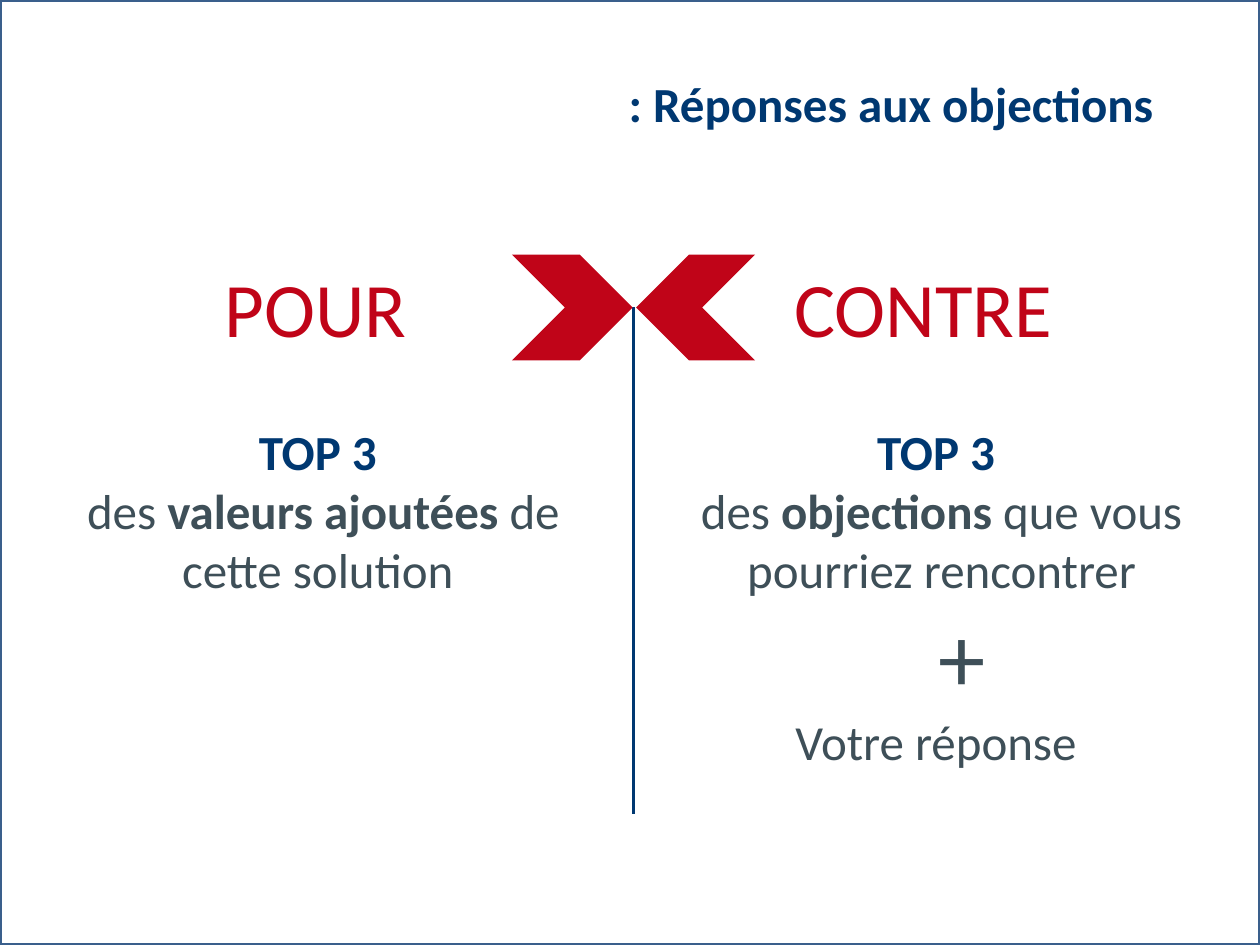
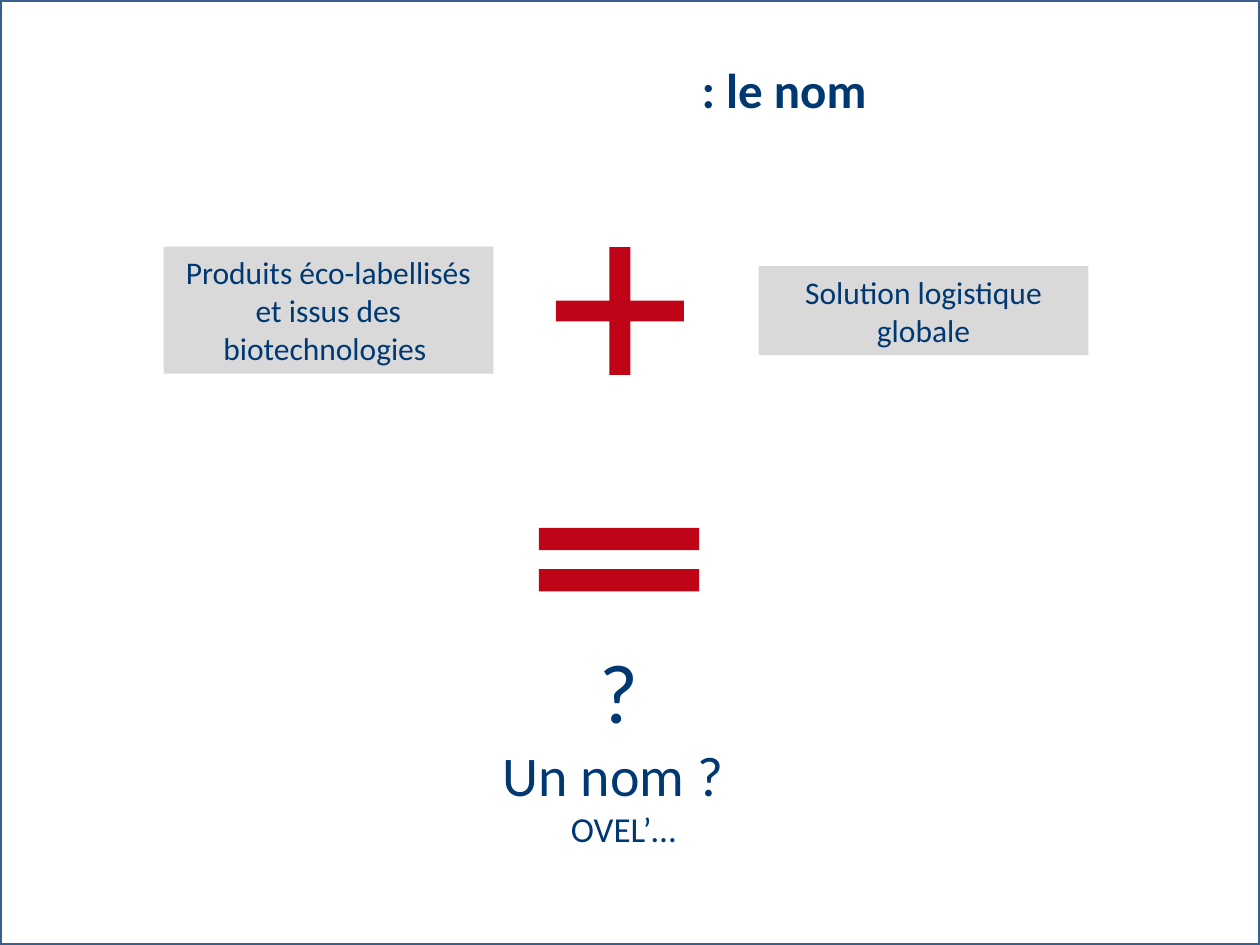
from pptx import Presentation
from pptx.dml.color import RGBColor
from pptx.enum.shapes import MSO_CONNECTOR as Connector, MSO_SHAPE as Shape
from pptx.enum.text import PP_ALIGN as Align
from pptx.oxml.ns import qn
from pptx.util import Pt
from lxml.etree import SubElement

NAVY, RED, SLATE, GREY, WHITE, FRAME = "003871", "C00418", "3E4F58", "D9D9D9", "FFFFFF", "3A5F8C"
WIDTH, HEIGHT = 720, 540
RULE = 2.25


def rgb(hex_code):
    return RGBColor.from_string(hex_code)


class Deck:
    """Holds the shared style and the slide being built."""

    font = "Calibri"

    def __init__(self):
        self.file = Presentation()
        self.file.slide_width, self.file.slide_height = Pt(WIDTH), Pt(HEIGHT)
        self.slide = None

    def new_slide(self, title, title_left, title_top):
        self.slide = self.file.slides.add_slide(self.file.slide_layouts[6])
        self.shape(Shape.RECTANGLE, (0, 0, WIDTH, HEIGHT), WHITE, outline=FRAME)
        self.text((title_left, title_top, 445, 41), [([(title, dict(bold=True))], {})])

    def shape(self, kind, box, fill, outline=None, adjust=(), rotation=0):
        shape = self.slide.shapes.add_shape(kind, *map(Pt, box))
        shape.shadow.inherit = False
        shape.rotation = rotation
        shape.fill.solid()
        shape.fill.fore_color.rgb = rgb(fill)
        if outline:
            shape.line.color.rgb = rgb(outline)
            shape.line.width = Pt(RULE)
        else:
            shape.line.fill.background()
        for position, value in enumerate(adjust):
            shape.adjustments[position] = value
        return shape

    def label(self, words, box):
        self.fill_frame(self.shape(Shape.RECTANGLE, box, GREY).text_frame,
                        [([(words, dict(size=18))], {})])

    def text(self, box, paragraphs):
        frame = self.slide.shapes.add_textbox(*map(Pt, box)).text_frame
        self.fill_frame(frame, paragraphs)

    def fill_frame(self, frame, paragraphs):
        frame.word_wrap = True
        for index, (runs, margins) in enumerate(paragraphs):
            paragraph = frame.paragraphs[0] if index == 0 else frame.add_paragraph()
            paragraph.alignment = Align.CENTER
            for side, points in margins.items():
                paragraph._p.get_or_add_pPr().set(side, str(Pt(points)))
            for words, look in runs:
                run = paragraph.add_run()
                run.text = words
                look = dict(name=self.font, size=28, color=NAVY, bold=False) | look
                run.font.color.rgb = rgb(look.pop("color"))
                look["size"] = Pt(look["size"])
                for attribute, value in look.items():
                    setattr(run.font, attribute, value)

    def line(self, start, end, color):
        line = self.slide.shapes.add_connector(Connector.STRAIGHT, *map(Pt, start + end))
        line.line.color.rgb = rgb(color)
        line.line.width = Pt(RULE)
        SubElement(line._element.spPr, qn("a:effectLst"))


def objections(deck):
    deck.new_slide(": Réponses aux objections", 286.5, 38.5)
    band_top, band_height, middle = 145.5, 60.5, 362
    heading, body, strong = dict(size=44, color=RED), dict(color=SLATE), dict(color=SLATE, bold=True)
    for words, left, margins in (("POUR ", 88, {}), ("CONTRE ", 440.5, dict(marR=10))):
        deck.text((left, band_top, 194.5, band_height), [([(words, heading)], margins)])
    deck.line((middle, 175.5), (middle, 465), NAVY)

    top_three = ([("TOP 3 ", dict(bold=True))], {})
    values = [("des ", body), ("valeurs ajoutées ", strong), ("de cette solution ", body)]
    doubts = [("des ", body), ("objections ", strong), ("que vous pourriez rencontrer", body)]
    deck.text((42.5, 237.5, 284.5, 109), [top_three, (values, {})])
    deck.text((382.5, 237.5, 311, 208), [
        top_three,
        (doubts, {}),
        ([("+", dict(size=54, color=SLATE))], dict(marL=24)),
        ([("Votre réponse ", body)], {}),
    ])
    for left, width, rotation in ((292.5, 69, 0), (363.5, 68, 180)):
        deck.shape(Shape.CHEVRON, (left, band_top, width, band_height), RED, rotation=rotation)


def naming(deck):
    deck.new_slide(": le nom", 225.5, 30.5)
    deck.label("Produits éco-labellisés et issus des biotechnologies ", (93.5, 141, 188.5, 72.5))
    deck.label("Solution logistique globale", (433.5, 152, 188.5, 51))
    deck.shape(Shape.MATH_PLUS, (304.5, 128, 99.5, 99.5), RED, adjust=(0.12,))
    deck.shape(Shape.MATH_EQUAL, (291.5, 274.5, 124.5, 90.5), RED, adjust=(0.14, 0.12))
    deck.text((189.5, 362, 329, 133), [
        ([(words, dict(size=size))], {})
        for words, size in (("?", 48), ("Un nom ? ", 32), (" OVEL’…", 20))
    ])


def main():
    deck = Deck()
    objections(deck)
    naming(deck)
    deck.file.save("out.pptx")


if __name__ == "__main__":
    main()
